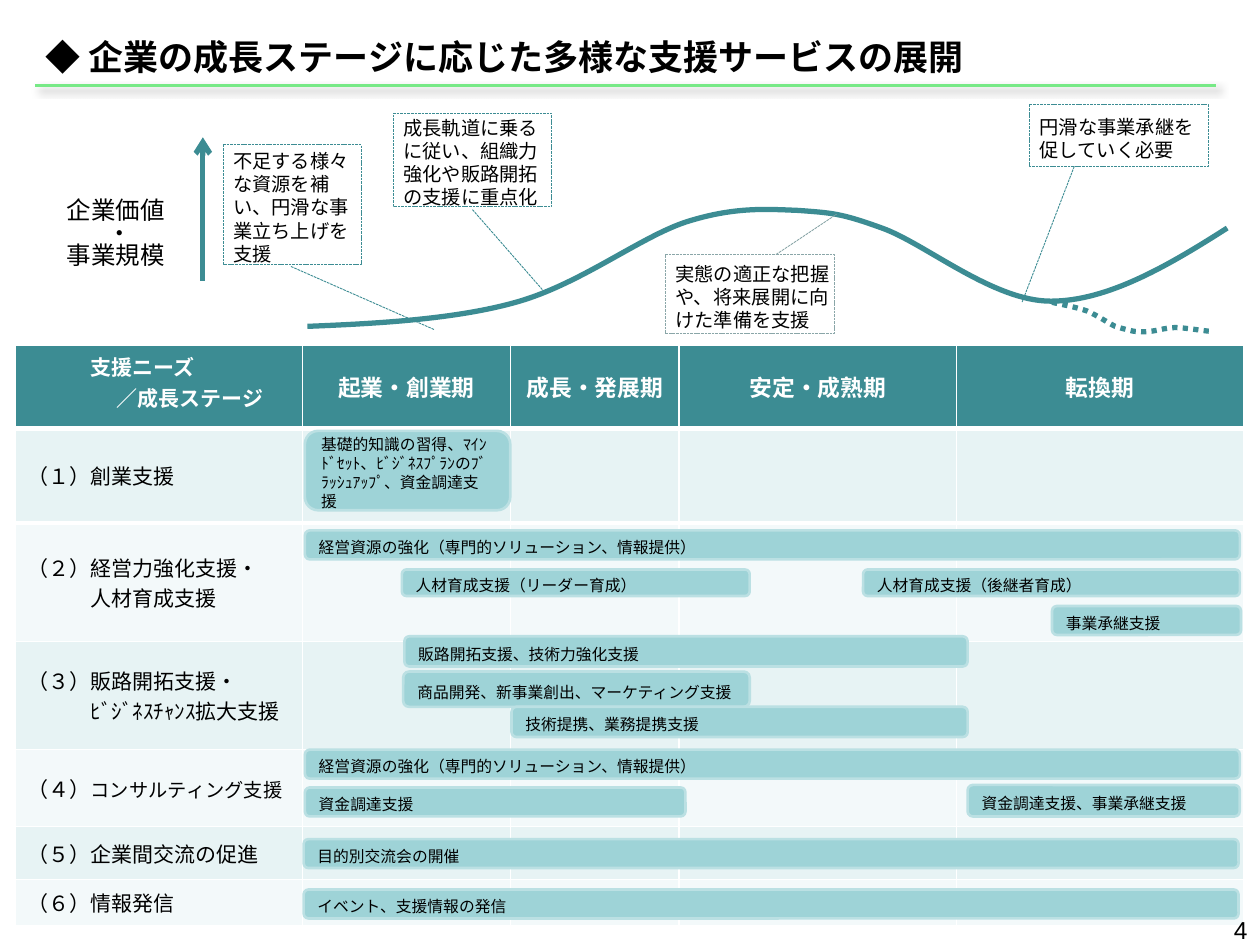
from lxml import etree
from pptx import Presentation
from pptx import util as u
from pptx.dml.color import RGBColor
from pptx.enum import dml, shapes, text
from pptx.oxml import ns

Inches, Pt = u.Inches, u.Pt
color = RGBColor.from_string
TEAL, BLACK, WHITE = "3C8C93", "000000", "FFFFFF"
JAPANESE = "Noto Sans CJK JP"
LEFT, CENTER, RIGHT = text.PP_ALIGN.LEFT, text.PP_ALIGN.CENTER, text.PP_ALIGN.RIGHT


def write_text(frame, lines, size, ink=BLACK, bold=False, font=JAPANESE, aligns=(LEFT,), indents=(0,)):
    for index, line in enumerate(lines):
        paragraph = frame.paragraphs[0] if index == 0 else frame.add_paragraph()
        paragraph.text = line
        paragraph.alignment = aligns[index % len(aligns)]
        properties = paragraph._p.get_or_add_pPr()
        properties.set("hangingPunct", "0")
        indent = indents[index % len(indents)]
        if indent:
            properties.set("marL", str(Inches(indent)))
            properties.set("indent", "0")
        paragraph.font.size = Pt(size)
        paragraph.font.bold = bold
        paragraph.font.color.rgb = color(ink)
        paragraph.font.name = font
        etree.SubElement(paragraph.font._element, ns.qn("a:ea"), typeface=JAPANESE)


def draw_curve(start, controls):
    builder = slide.shapes.build_freeform(Inches(start[0]), Inches(start[1]))
    builder.add_line_segments([(Inches(x), Inches(y)) for x, y in controls], close=False)
    curve = builder.convert_to_shape()
    lines = list(curve._element.iter(ns.qn("a:lnTo")))
    for first, second, third in zip(lines[::3], lines[1::3], lines[2::3]):
        bezier = etree.Element(ns.qn("a:cubicBezTo"))
        first.addprevious(bezier)
        for line in (first, second, third):
            bezier.append(line[0])
            line.getparent().remove(line)
    curve.shadow.inherit = False
    curve.fill.background()
    curve.line.color.rgb = color(TEAL)
    curve.line.width = Pt(3)
    return curve


presentation = Presentation()
presentation.slide_width, presentation.slide_height = Inches(10), Inches(7.5)
slide = presentation.slides.add_slide(presentation.slide_layouts[5])

title = slide.shapes.title
title.left, title.top, title.width, title.height = map(Inches, (0.26, 0.23, 7.59, 0.44))
title.text_frame.word_wrap = False
title.text_frame.auto_size = text.MSO_AUTO_SIZE.SHAPE_TO_FIT_TEXT
title.text_frame.vertical_anchor = text.MSO_ANCHOR.TOP
write_text(title.text_frame, ["◆ 企業の成長ステージに応じた多様な支援サービスの展開"], 20, bold=True)

stages = ["起業・創業期", "成長・発展期", "安定・成熟期", "転換期"]
needs = [
    ["（１）創業支援"],
    ["（２）経営力強化支援・", "人材育成支援"],
    ["（３）販路開拓支援・", "ﾋﾞｼﾞﾈｽﾁｬﾝｽ拡大支援"],
    ["（４）"],
    ["（５）企業間交流の促進"],
    ["（６）情報発信"],
]
column_widths = [2.28, 1.65, 1.34, 2.2, 2.28]
row_heights = [0.66, 0.75, 0.94, 0.86, 0.61, 0.42, 0.37]
table = slide.shapes.add_table(
    len(row_heights), len(column_widths), Inches(0.12), Inches(2.74), Inches(9.76), Inches(4.61)
).table
for column, width in zip(table.columns, column_widths):
    column.width = Inches(width)
for row_index, height in enumerate(row_heights):
    row = table.rows[row_index]
    row.height = Inches(height)
    for cell in row.cells:
        cell.fill.solid()
        cell.fill.fore_color.rgb = color(TEAL if row_index == 0 else ("F3F9FA", "E7F3F4")[row_index % 2])
        cell.vertical_anchor = text.MSO_ANCHOR.MIDDLE
        if row_index:
            cell.margin_top = cell.margin_bottom = 0
            cell.text_frame.paragraphs[0].font.size = Pt(9)
        if row_index < 2:
            border = etree.Element(ns.qn(("a:lnB", "a:lnT")[row_index]), w=str(Pt(3)))
            border_fill = etree.SubElement(border, ns.qn("a:solidFill"))
            etree.SubElement(border_fill, ns.qn("a:srgbClr"), val=WHITE)
            cell._tc.get_or_add_tcPr().insert(0, border)

corner = table.cell(0, 0)
corner.vertical_anchor = text.MSO_ANCHOR.TOP
write_text(corner.text_frame, ["支援ニーズ", "／成長ステージ"], 12, WHITE, True, "Arial", (LEFT, CENTER), (0.5,))
for column_index, stage in enumerate(stages, 1):
    write_text(table.cell(0, column_index).text_frame, [stage], 13, WHITE, True, aligns=(CENTER,))
table.cell(0, 4).margin_left = table.cell(0, 4).margin_right = 0
for row_index, lines in enumerate(needs, 1):
    cell = table.cell(row_index, 0)
    cell.margin_top = cell.margin_bottom = Inches(0.05)
    write_text(cell.text_frame, lines, 12, indents=(0, 0.5))
consulting = table.cell(4, 0).text_frame.paragraphs[0].add_run()
consulting.text = "コンサルティング支援"
consulting.font.size = Pt(11)

draw_curve((2.44, 2.59), [
    (2.93, 2.57), (3.59, 2.54), (4.09, 2.4),
    (4.6, 2.26), (5.08, 1.88), (5.45, 1.76),
    (5.83, 1.64), (6.08, 1.66), (6.34, 1.67),
    (6.6, 1.69), (6.67, 1.69), (7, 1.81),
    (7.34, 1.93), (7.88, 2.39), (8.34, 2.39),
    (8.79, 2.39), (9.27, 2.11), (9.74, 1.81),
])
decline = draw_curve((8.35, 2.4), [
    (8.44, 2.42), (8.55, 2.44), (8.63, 2.47),
    (8.72, 2.51), (8.79, 2.56), (8.85, 2.59),
    (8.91, 2.61), (8.96, 2.62), (9, 2.63),
    (9.05, 2.63), (9.06, 2.64), (9.12, 2.63),
    (9.17, 2.63), (9.25, 2.6), (9.33, 2.6),
    (9.4, 2.6), (9.58, 2.63), (9.61, 2.63),
])
decline.line.dash_style = dml.MSO_LINE.ROUND_DOT

connectors = []
for x1, y1, x2, y2, ink, width in [(1.61, 2.23, 1.61, 1.09, TEAL, 3), (0.28, 0.68, 9.65, 0.68, "77E986", 2)]:
    connector = slide.shapes.add_connector(
        shapes.MSO_CONNECTOR.STRAIGHT, Inches(x1), Inches(y1), Inches(x2), Inches(y2)
    )
    connector.line.color.rgb = color(ink)
    connector.line.width = Pt(width)
    effects = etree.SubElement(connector._element.spPr, ns.qn("a:effectLst"))
    connectors.append((connector, effects))
value_arrow = connectors[0][0]
etree.SubElement(value_arrow.line._get_or_add_ln(), ns.qn("a:tailEnd"), type="arrow")
title_shadow = etree.SubElement(
    connectors[1][1], ns.qn("a:outerShdw"),
    blurRad=str(Pt(4)), dist=str(Pt(3)), dir="2700000", algn="tl", rotWithShape="0",
)
shadow_color = etree.SubElement(title_shadow, ns.qn("a:srgbClr"), val=BLACK)
etree.SubElement(shadow_color, ns.qn("a:alpha"), val="40000")

axis_label = slide.shapes.add_textbox(Inches(0.43), Inches(1.55), Inches(1.04), Inches(0.65)).text_frame
axis_label.word_wrap = True
write_text(axis_label, ["企業価値", "・", "事業規模"], 14, aligns=(LEFT, CENTER))
for paragraph in axis_label.paragraphs:
    paragraph.line_spacing = Pt(13)

callouts = [
    (1.77, 1.15, 1.1, 0.95, (1.016, 0.491, 1.543, 1.524), TEAL, "不足する様々な資源を補い、円滑な事業立ち上げを支援"),
    (3.12, 0.9, 1.26, 0.74, (1.032, 0.5, 1.917, 0.954), TEAL, "成長軌道に乗るに従い、組織力強化や販路開拓の支援に重点化"),
    (5.28, 2.02, 1.34, 0.63, (0.001, 0.656, -0.506, 1.014), "8AA6A8", "実態の適正な把握や、将来展開に向けた準備を支援"),
    (8.17, 0.83, 1.42, 0.49, (0.999, 0.251, 3.198, -0.041), TEAL, "円滑な事業承継を促していく必要"),
]
for left, top, width, height, pointer, ink, message in callouts:
    callout = slide.shapes.add_shape(
        shapes.MSO_SHAPE.LINE_CALLOUT_1, Inches(left), Inches(top), Inches(width), Inches(height)
    )
    for index, value in enumerate(pointer):
        callout.adjustments[index] = value
    callout.shadow.inherit = False
    callout.fill.background()
    callout.line.color.rgb = color(ink)
    callout.line.width = Pt(0.5)
    callout.line.dash_style = dml.MSO_LINE.SQUARE_DOT
    frame = callout.text_frame
    frame.vertical_anchor = text.MSO_ANCHOR.MIDDLE
    frame.margin_left = frame.margin_top = Inches(0.08)
    frame.margin_right, frame.margin_bottom = 0, Inches(0.04)
    write_text(frame, [message], 11)

bars = [
    (2.42, 3.42, 1.63, 0.63, "基礎的知識の習得、ﾏｲﾝﾄﾞｾｯﾄ、ﾋﾞｼﾞﾈｽﾌﾟﾗﾝのﾌﾞﾗｯｼｭｱｯﾌﾟ、資金調達支援"),
    (2.42, 4.21, 7.42, 0.23, "経営資源の強化（専門的ソリューション、情報提供）"),
    (8.35, 4.81, 1.5, 0.23, "事業承継支援"),
    (3.2, 5.33, 2.75, 0.28, "商品開発、新事業創出、マーケティング支援"),
    (3.19, 4.52, 2.76, 0.21, "人材育成支援（リーダー育成）"),
    (6.85, 4.52, 2.99, 0.21, "人材育成支援（後継者育成）"),
    (3.21, 5.05, 4.47, 0.24, "販路開拓支援、技術力強化支援"),
    (4.06, 5.61, 3.62, 0.24, "技術提携、業務提携支援"),
    (2.42, 5.95, 7.42, 0.23, "経営資源の強化（専門的ソリューション、情報提供）"),
    (2.42, 6.25, 3.02, 0.23, "資金調達支援"),
    (7.68, 6.23, 2.16, 0.25, "資金調達支援、事業承継支援"),
    (2.41, 6.66, 7.42, 0.23, "目的別交流会の開催"),
    (2.41, 7.06, 7.42, 0.23, "イベント、支援情報の発信"),
]
for left, top, width, height, service in bars:
    bar = slide.shapes.add_shape(
        shapes.MSO_SHAPE.ROUNDED_RECTANGLE, Inches(left), Inches(top), Inches(width), Inches(height)
    )
    bar.shadow.inherit = False
    bar.fill.solid()
    bar.fill.fore_color.rgb = color("9ED3D7")
    bar.line.color.rgb = color("BBE0E3")
    bar.line.width = Pt(1.5)
    bar.text_frame.vertical_anchor = text.MSO_ANCHOR.MIDDLE
    bar.text_frame.margin_top, bar.text_frame.margin_bottom = Inches(0.04), 0
    write_text(bar.text_frame, [service], 9)

page_number = slide.shapes.add_textbox(Inches(7.67), Inches(7.21), Inches(2.33), Inches(0.28)).text_frame
page_number.word_wrap = True
write_text(page_number, ["4"], 14, font="Arial", aligns=(RIGHT,))

presentation.save("out.pptx")
